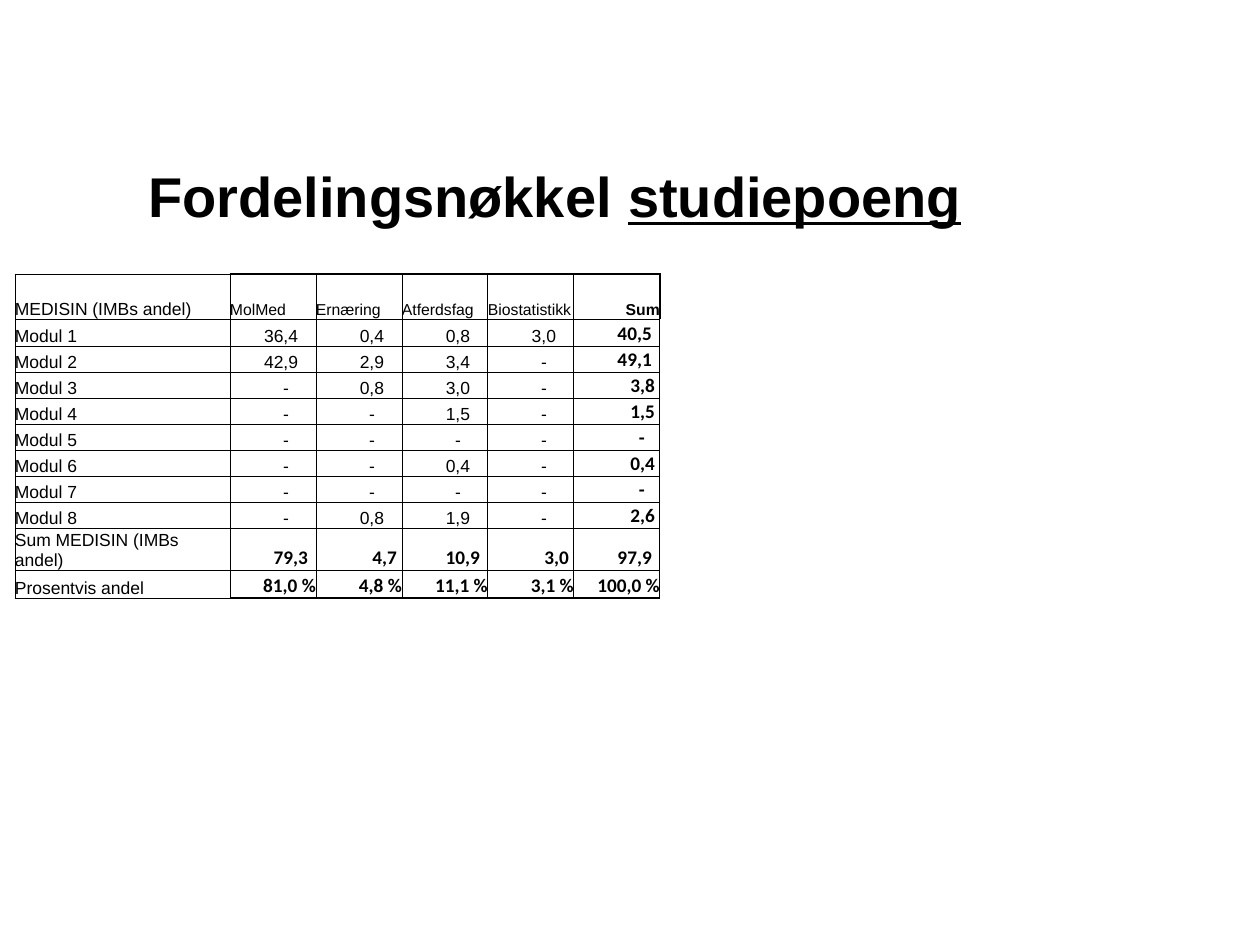
from lxml.etree import SubElement
from pptx import Presentation
from pptx.dml.color import RGBColor
from pptx.enum.text import MSO_ANCHOR, PP_ALIGN
from pptx.oxml.ns import qn
from pptx.util import Emu, Pt

PX = 914400 // 126
BLACK = RGBColor(0, 0, 0)
WHITE = RGBColor(255, 255, 255)
TITLE = dict(name="Arial", size=Pt(32), bold=True)
LABEL = dict(name="Arial", size=Pt(10), bold=False)
HEAD = dict(name="Arial", size=Pt(9), bold=False)
HEAD_SUM = dict(HEAD, bold=True)
TOTAL = dict(name="Calibri", size=Pt(11), bold=True)
COLUMNS = [215] + [86] * 5
HEIGHTS = [45, 27] + [26] * 7 + [39, 28]
ROWS = [
    ["MEDISIN (IMBs andel)", "MolMed", "Ernæring", "Atferdsfag", "Biostatistikk", "Sum"],
    ["Modul 1", "36,4", "0,4", "0,8", "3,0", "40,5"],
    ["Modul 2", "42,9", "2,9", "3,4", "-", "49,1"],
    ["Modul 3", "-", "0,8", "3,0", "-", "3,8"],
    ["Modul 4", "-", "-", "1,5", "-", "1,5"],
    ["Modul 5", "-", "-", "-", "-", "-"],
    ["Modul 6", "-", "-", "0,4", "-", "0,4"],
    ["Modul 7", "-", "-", "-", "-", "-"],
    ["Modul 8", "-", "0,8", "1,9", "-", "2,6"],
    ["Sum MEDISIN (IMBs andel)", "79,3", "4,7", "10,9", "3,0", "97,9"],
    ["Prosentvis andel", "81,0 %", "4,8 %", "11,1 %", "3,1 %", "100,0 %"],
]
LAST_ROW, LAST_COL = len(ROWS) - 1, len(COLUMNS) - 1


def px(n):
    """Turn pixels into EMU."""
    return Emu(n * PX)


def add_run(p, text, fmt):
    """Add a black run with the given font values."""
    r = p.add_run()
    r.text = text
    r.font.color.rgb = BLACK
    for key, value in fmt.items():
        setattr(r.font, key, value)


def add_title(s):
    """Add the title with its last word underlined."""
    sp = s.shapes.add_textbox(px(136), px(116), px(1061), px(158))
    tf = sp.text_frame
    tf.word_wrap = True
    tf.vertical_anchor = MSO_ANCHOR.MIDDLE
    p = tf.paragraphs[0]
    add_run(p, "Fordelingsnøkkel ", TITLE)
    add_run(p, "studiepoeng", dict(TITLE, underline=True))


def set_borders(cell, thick):
    """Draw black cell borders, with the sides in thick at double width."""
    tcPr = cell._tc.get_or_add_tcPr()
    for i, side in enumerate(("lnL", "lnR", "lnT", "lnB")):
        width = Pt(1) if side in thick else Pt(0.5)
        ln = SubElement(tcPr, qn(f"a:{side}"), w=str(width))
        tcPr.remove(ln)
        tcPr.insert(i, ln)
        fill = SubElement(ln, qn("a:solidFill"))
        SubElement(fill, qn("a:srgbClr"), val=str(BLACK))


def thick_sides(row, col):
    """Name the sides of a cell that have a thick border."""
    sides = set()
    if col and row == 0:
        sides.add("lnT")
    if col and row == LAST_ROW:
        sides.add("lnB")
    if (row, col) == (0, LAST_COL):
        sides.add("lnR")
    return sides


def cell_format(row, col):
    """Choose the font values of a cell."""
    if col == 0:
        return LABEL
    if row == 0:
        return HEAD_SUM if col == LAST_COL else HEAD
    return TOTAL if col == LAST_COL or row >= LAST_ROW - 1 else LABEL


def right_margin(text, fmt):
    """Give the gap in pixels to the right of a number."""
    if text.endswith("%"):
        return 0
    if fmt is TOTAL:
        return 15 if text == "-" else 8 if len(text) > 3 else 5
    return 27 if text == "-" else 18


def fill_cell(cell, row, col, text):
    """Write and format one table cell."""
    fmt = cell_format(row, col)
    number = row > 0 and col > 0
    margin = right_margin(text, fmt) if number else 0
    values = dict(margin_left=0, margin_top=0, margin_bottom=0,
                  margin_right=px(margin), vertical_anchor=MSO_ANCHOR.BOTTOM)
    for key, value in values.items():
        setattr(cell, key, value)
    cell.fill.solid()
    cell.fill.fore_color.rgb = WHITE
    set_borders(cell, thick_sides(row, col))
    p = cell.text_frame.paragraphs[0]
    p.alignment = PP_ALIGN.RIGHT if number or fmt is HEAD_SUM else PP_ALIGN.LEFT
    add_run(p, text, fmt)


def add_points_table(s):
    """Add the table of study points by module and subject."""
    sp = s.shapes.add_table(len(ROWS), len(COLUMNS), px(15), px(274),
                            px(sum(COLUMNS)), px(sum(HEIGHTS)))
    table = sp.table
    table.first_row = table.horz_banding = False
    for column, width in zip(table.columns, COLUMNS):
        column.width = px(width)
    for row, height in zip(table.rows, HEIGHTS):
        row.height = px(height)
    for i, texts in enumerate(ROWS):
        for j, text in enumerate(texts):
            fill_cell(table.cell(i, j), i, j, text)


def main():
    """Build and save the slide."""
    prs = Presentation()
    prs.slide_width, prs.slide_height = px(1260), px(945)
    s = prs.slides.add_slide(prs.slide_layouts[6])
    add_title(s)
    add_points_table(s)
    prs.save("out.pptx")


if __name__ == "__main__":
    main()
